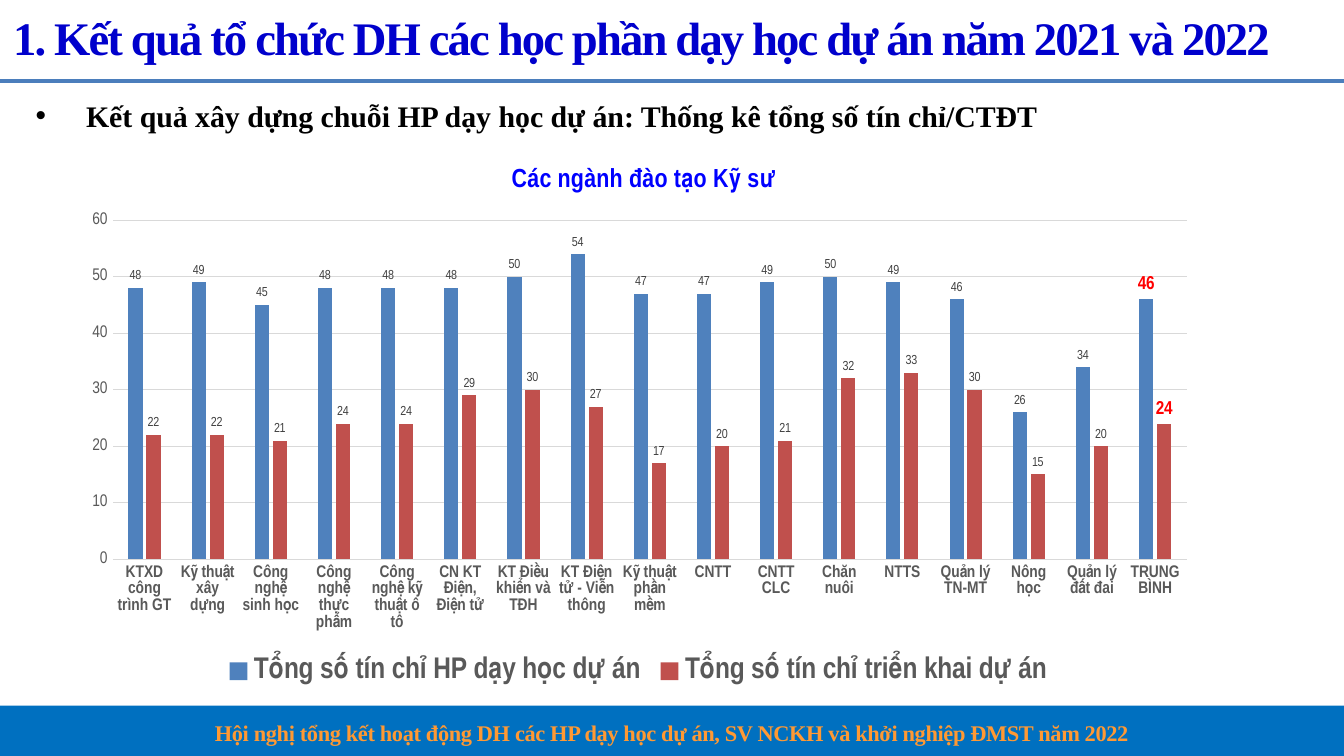
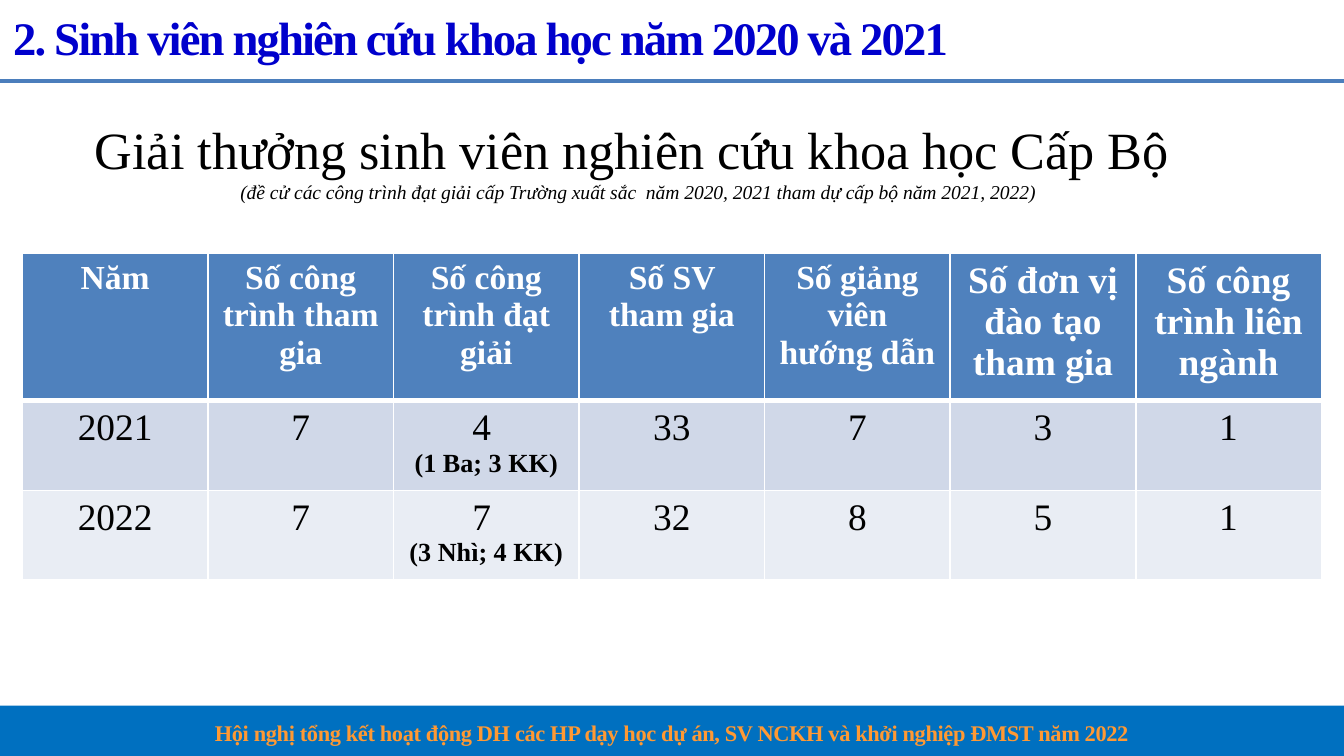
import dataclasses

import lxml.etree
import pptx
import pptx.chart.data
import pptx.dml.color
import pptx.enum.chart
import pptx.enum.shapes
import pptx.enum.text
import pptx.oxml.ns
import pptx.util

Pt = pptx.util.Pt
qn = pptx.oxml.ns.qn
Align = pptx.enum.text.PP_ALIGN
Anchor = pptx.enum.text.MSO_ANCHOR
SERIF = "Times New Roman"
NARROW = "Arial Narrow"


@dataclasses.dataclass(frozen=True)
class Style:
    size: float
    color: str = "000000"
    bold: bool = False
    slant: bool = False
    face: str = SERIF
    track: int = 0


@dataclasses.dataclass(frozen=True)
class Theme:
    bar: str = "0070C0"
    rule: str = "4B7EBC"
    grid: str = "D9D9D9"
    white: str = "FFFFFF"
    head: str = "4F81BD"
    bands: tuple = ("D0D8E8", "E9EDF4")
    fills: tuple = ("4F81BD", "C0504D")
    title: Style = Style(25, "0000CC", True, track=-100)
    foot: Style = Style(12, "FF9933", True, track=-20)
    point: Style = Style(16, bold=True)
    award: Style = Style(28)
    note: Style = Style(10.5, slant=True)
    small: Style = Style(18, "FFFFFF", True)
    large: Style = Style(20, "FFFFFF", True)
    value: Style = Style(20)
    prize: Style = Style(14, bold=True)
    name: Style = Style(14, "0000FF", True, face=NARROW)
    group: Style = Style(9, "595959", True, face=NARROW)
    scale: Style = Style(9, "595959", face=NARROW)
    key: Style = Style(16, "595959", True, face=NARROW)
    label: Style = Style(7, "404040", face=NARROW)
    mean: Style = Style(10, "FF0000", True, face=NARROW)


THEME = Theme()
WIDTH, HEIGHT = 720, 405
FOOT = "Hội nghị tổng kết hoạt động DH các HP dạy học dự án, SV NCKH và khởi nghiệp ĐMST năm 2022"
GROUPS = [
    "KTXD công trình GT", "Kỹ thuật xây dựng", "Công nghệ sinh học",
    "Công nghệ thực phẩm", "Công nghệ kỹ thuật ô tô", "CN KT Điện, Điện tử",
    "KT Điều khiển và TĐH", "KT Điện tử - Viễn thông", "Kỹ thuật phần mềm",
    "CNTT", "CNTT CLC", "Chăn nuôi", "NTTS", "Quản lý TN-MT", "Nông học",
    "Quản lý đất đai", "TRUNG BÌNH",
]
SERIES = {
    "Tổng số tín chỉ HP dạy học dự án":
        [48, 49, 45, 48, 48, 48, 50, 54, 47, 47, 49, 50, 49, 46, 26, 34, 46],
    "Tổng số tín chỉ triển khai dự án":
        [22, 22, 21, 24, 24, 29, 30, 27, 17, 20, 21, 32, 33, 30, 15, 20, 24],
}
HEADS = [
    "Năm", "Số công trình tham gia", "Số công trình đạt giải", "Số SV tham gia",
    "Số giảng viên hướng dẫn", "Số đơn vị đào tạo tham gia", "Số công trình liên ngành",
]
YEARS = [
    ["2021", "7", "4 \n(1 Ba; 3 KK)", "33", "7", "3", "1"],
    ["2022", "7", "7 \n(3 Nhì; 4 KK)", "32", "8", "5", "1"],
]


def rgb(code):
    return pptx.dml.color.RGBColor.from_string(code)


def dress(font, style):
    font.size, font.name = Pt(style.size), style.face
    font.bold, font.italic = style.bold, style.slant
    font.color.rgb = rgb(style.color)


def fill_text(frame, lines, align):
    frame.text = "\n".join(words for words, style in lines)
    for para, (words, style) in zip(frame.paragraphs, lines):
        para.alignment = align
        for run in para.runs:
            dress(run.font, style)
            if style.track:
                run.font._element.set("spc", str(style.track))


def add_text(slide, box, lines, align=Align.LEFT, anchor=Anchor.TOP):
    frame = slide.shapes.add_textbox(*map(Pt, box)).text_frame
    frame.word_wrap = True
    frame.vertical_anchor = anchor
    fill_text(frame, lines, align)
    return frame.paragraphs[0]


def add_bullet(para, indent):
    props = para._p.get_or_add_pPr()
    props.set("marL", str(Pt(indent)))
    props.set("indent", str(-Pt(indent)))
    lxml.etree.SubElement(props, qn("a:buFont")).set("typeface", "Arial")
    lxml.etree.SubElement(props, qn("a:buChar")).set("char", "•")


def add_slide(deck, title):
    slide = deck.slides.add_slide(deck.slide_layouts[6])
    bar = slide.shapes.add_shape(
        pptx.enum.shapes.MSO_SHAPE.RECTANGLE, 0, Pt(378), Pt(WIDTH), Pt(27))
    bar.shadow.inherit = False
    bar.fill.solid()
    bar.fill.fore_color.rgb = rgb(THEME.bar)
    bar.line.fill.background()
    rule = slide.shapes.add_connector(
        pptx.enum.shapes.MSO_CONNECTOR.STRAIGHT, 0, Pt(43.2), Pt(WIDTH), Pt(43.2))
    rule.line.color.rgb = rgb(THEME.rule)
    rule.line.width = Pt(2)
    lxml.etree.SubElement(rule._element.spPr, qn("a:effectLst"))
    foot = add_text(slide, (0, 379.5, WIDTH, 23), [(FOOT, THEME.foot)], Align.CENTER)
    foot.line_spacing = 1.15
    foot.space_before, foot.space_after = Pt(2.4), Pt(10)
    add_text(slide, (0, 1.5, WIDTH, 36.5), [(title, THEME.title)], anchor=Anchor.MIDDLE)
    return slide


def place(part, index, **spots):
    old = part.find(qn("c:layout"))
    if old is not None:
        part.remove(old)
    layout = lxml.etree.Element(qn("c:layout"))
    part.insert(index, layout)
    hand = lxml.etree.SubElement(layout, qn("c:manualLayout"))
    for tag, value in spots.items():
        lxml.etree.SubElement(hand, qn("c:" + tag)).set("val", str(value))


def style_axis(axis, style):
    dress(axis.tick_labels.font, style)
    axis.major_tick_mark = pptx.enum.chart.XL_TICK_MARK.NONE
    axis.minor_tick_mark = pptx.enum.chart.XL_TICK_MARK.NONE


def thin_line(line):
    line.color.rgb = rgb(THEME.grid)
    line.width = Pt(0.75)


def style_bars(bars, color):
    bars.format.fill.solid()
    bars.format.fill.fore_color.rgb = rgb(color)
    bars.invert_if_negative = False
    outside = pptx.enum.chart.XL_LABEL_POSITION.OUTSIDE_END
    labels = bars.data_labels
    labels.show_value = True
    labels.position = outside
    dress(labels.font, THEME.label)
    mean = bars.points[len(GROUPS) - 1].data_label
    dress(mean.font, THEME.mean)
    mean.position = outside


def add_chart(slide, box, title):
    data = pptx.chart.data.CategoryChartData()
    data.categories = GROUPS
    for name, values in SERIES.items():
        data.add_series(name, values)
    kind = pptx.enum.chart.XL_CHART_TYPE.COLUMN_CLUSTERED
    chart = slide.shapes.add_chart(kind, *map(Pt, box), data).chart
    chart.font.size, chart.font.name = Pt(10), NARROW
    chart.has_title = True
    fill_text(chart.chart_title.text_frame, [(title, THEME.name)], Align.CENTER)
    chart.chart_title.include_in_layout = False
    place(chart.chart_title.element, 1, xMode="edge", yMode="edge", x=0.385, y=0.03)
    place(chart.element.find(".//" + qn("c:plotArea")), 0, layoutTarget="inner",
          xMode="edge", yMode="edge", x=0.04, y=0.14, w=0.94, h=0.62)
    chart.has_legend = True
    chart.legend.position = pptx.enum.chart.XL_LEGEND_POSITION.BOTTOM
    chart.legend.include_in_layout = False
    dress(chart.legend.font, THEME.key)
    style_axis(chart.category_axis, THEME.group)
    thin_line(chart.category_axis.format.line)
    scale = chart.value_axis
    style_axis(scale, THEME.scale)
    scale.minimum_scale, scale.maximum_scale, scale.major_unit = 0, 60, 10
    scale.format.line.fill.background()
    thin_line(scale.major_gridlines.format.line)
    plot = chart.plots[0]
    plot.gap_width, plot.overlap = 219, -27
    plot.vary_by_categories = False
    for bars, color in zip(plot.series, THEME.fills):
        style_bars(bars, color)


def add_edge(cell, side, width):
    line = lxml.etree.SubElement(cell._tc.get_or_add_tcPr(), qn("a:ln" + side))
    line.set("w", str(Pt(width)))
    paint = lxml.etree.SubElement(line, qn("a:solidFill"))
    lxml.etree.SubElement(paint, qn("a:srgbClr")).set("val", THEME.white)


def fill_cell(cell, lines, color, edges):
    for side, width in edges.items():
        add_edge(cell, side, width)
    cell.fill.solid()
    cell.fill.fore_color.rgb = rgb(color)
    fill_text(cell.text_frame, lines, Align.CENTER)


def add_table(slide, left, top, width, heights):
    rows = [HEADS] + YEARS
    count = len(HEADS)
    table = slide.shapes.add_table(
        len(rows), count, Pt(left), Pt(top), Pt(width), Pt(sum(heights))).table
    for col in table.columns:
        col.width = Pt(width / count)
    for row, height in zip(table.rows, heights):
        row.height = Pt(height)
    for r, texts in enumerate(rows):
        edges = {"L": 1, "R": 1, "T": 3 if r == 1 else 1, "B": 3 if r == 0 else 1}
        color = THEME.bands[r - 1] if r else THEME.head
        for c, text in enumerate(texts):
            first = THEME.value if r else THEME.small if c < 5 else THEME.large
            lines = list(zip(text.split("\n"), (first, THEME.prize)))
            fill_cell(table.cell(r, c), lines, color, edges)


def main():
    deck = pptx.Presentation()
    deck.slide_width, deck.slide_height = Pt(WIDTH), Pt(HEIGHT)

    slide = add_slide(deck, "1. Kết quả tổ chức DH các học phần dạy học dự án năm 2021 và 2022")
    add_chart(slide, (36, 77, 612, 293), "Các ngành đào tạo Kỹ sư")
    point = add_text(
        slide, (12, 47, 696, 30),
        [("Kết quả xây dựng chuỗi HP dạy học dự án: Thống kê tổng số tín chỉ/CTĐT", THEME.point)],
        Align.JUSTIFY)
    point.line_spacing, point.space_before = 1.1, Pt(6)
    add_bullet(point, 27)

    slide = add_slide(deck, "2. Sinh viên nghiên cứu khoa học năm 2020 và 2021")
    add_table(slide, 12, 135.5, 696, (73.5, 45, 45))
    add_text(
        slide, (24, 65, 636, 42),
        [("Giải thưởng sinh viên nghiên cứu khoa học Cấp Bộ ", THEME.award),
         ("(đề cử các công trình đạt giải cấp Trường xuất sắc  năm 2020, 2021 "
          "tham dự cấp bộ năm 2021, 2022)", THEME.note)],
        Align.CENTER, Anchor.MIDDLE)

    deck.save("out.pptx")


if __name__ == "__main__":
    main()
